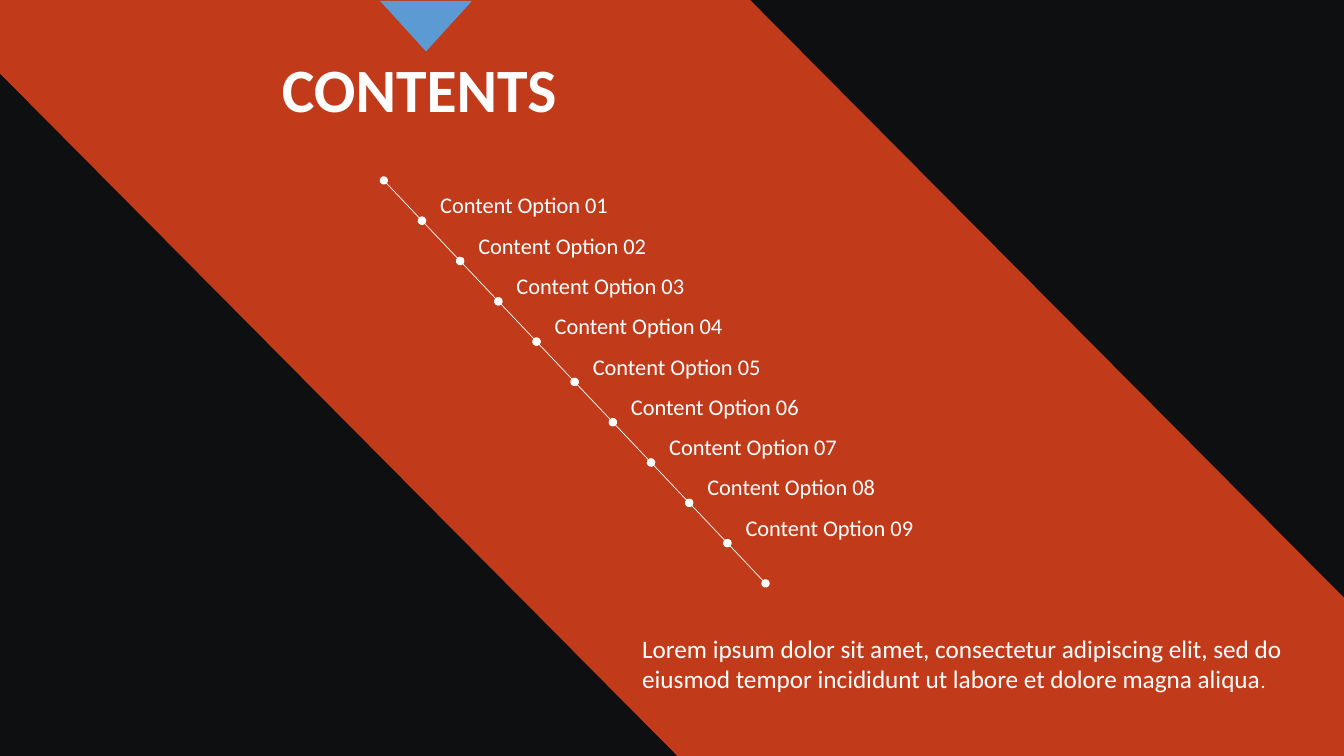
from lxml import etree
from pptx import Presentation
from pptx.dml.color import RGBColor
from pptx.enum.shapes import MSO_CONNECTOR, MSO_SHAPE
from pptx.enum.text import MSO_AUTO_SIZE, PP_ALIGN
from pptx.oxml.ns import qn
from pptx.util import Inches, Pt

LEFT, CENTER = PP_ALIGN.LEFT, PP_ALIGN.CENTER
TRIANGLE, STRAIGHT = MSO_SHAPE.ISOSCELES_TRIANGLE, MSO_CONNECTOR.STRAIGHT
GROW = MSO_AUTO_SIZE.SHAPE_TO_FIT_TEXT
COLORS = {"night": "0E0F11", "band": "FE4A1E", "marker": "5C9AD3", "text": "FFFFFF"}
FONT = "Calibri"


class SlideBuilder:
    """Draws on one slide; all lengths are percent of its width and height."""

    def __init__(self, deck):
        self.column = deck.slide_width / 100
        self.row = deck.slide_height / 100
        self.page = deck.slides.add_slide(deck.slide_layouts[6])
        self.shapes = self.page.shapes
        self.paint(self.page.background.fill, "night")

    def place(self, *lengths):
        """Turn alternating column and row lengths into EMU."""
        units = (self.column, self.row)
        return [round(length * units[i % 2]) for i, length in enumerate(lengths)]

    def paint(self, fill, color, opacity=100):
        fill.solid()
        fill.fore_color.rgb = RGBColor.from_string(COLORS[color])
        if opacity < 100:
            for element in fill._xPr.iter(qn("a:srgbClr")):
                etree.SubElement(element, qn("a:alpha"), val=str(opacity * 1000))

    def finish(self, shape, color, opacity=100):
        shape.shadow.inherit = False
        shape.line.fill.background()
        self.paint(shape.fill, color, opacity)

    def polygon(self, corners, color, opacity):
        points = [self.place(*corner) for corner in corners]
        outline = self.shapes.build_freeform(*points[0])
        outline.add_line_segments(points[1:], close=True)
        self.finish(outline.convert_to_shape(), color, opacity)

    def triangle(self, area, color, rotation):
        shape = self.shapes.add_shape(TRIANGLE, *self.place(*area))
        shape.rotation = rotation
        self.finish(shape, color)

    def dotted_line(self, start, end, color):
        """Add a thin line with a round dot at each end."""
        line = self.shapes.add_connector(STRAIGHT, *self.place(*start, *end))
        line.line.width = Pt(0.5)
        self.paint(line.line.fill, color)
        outline = line.line._get_or_add_ln()
        for tag in ("a:headEnd", "a:tailEnd"):
            etree.SubElement(outline, qn(tag), type="oval")
        etree.SubElement(line._element.spPr, qn("a:effectLst"))

    def text(self, area, spans, alignment=LEFT, bold=False):
        """Add a one-paragraph box; spans are (wording, point size) pairs."""
        box = self.shapes.add_textbox(*self.place(*area))
        frame = box.text_frame
        for name, value in {"word_wrap": True, "auto_size": GROW}.items():
            setattr(frame, name, value)
        para = frame.paragraphs[0]
        para.alignment = alignment
        for wording, size in spans:
            span = para.add_run()
            span.text = wording
            span.font.color.rgb = RGBColor.from_string(COLORS["text"])
            for name, value in {"name": FONT, "size": Pt(size), "bold": bold}.items():
                setattr(span.font, name, value)


def main():
    deck = Presentation()
    deck.slide_width, deck.slide_height = Inches(13.33), Inches(7.5)
    slide = SlideBuilder(deck)

    band = [(55.81, 0), (100, 79.07), (100, 100), (50.41, 100), (0, 9.73), (0, 0)]
    slide.polygon(band, "band", opacity=75)
    slide.text((16.2, 6.13, 30, 11.2), [("CONTENTS", 44)], CENTER, bold=True)

    step_x, step_y = 2.84, 5.33
    stops = [(28.56 + i * step_x, 23.87 + i * step_y) for i in range(11)]
    for start, end in zip(stops, stops[1:]):
        slide.dotted_line(start, end, "text")
    for number, (x, y) in enumerate(stops[:9], 1):
        slide.text((x + 3.45, y + 0.8, 15, 4.93), [(f"Content Option {number:02}", 16)])

    slide.triangle((28.28, 0.13, 6.83, 6.67), "marker", rotation=180)
    summary = (
        "Lorem ipsum dolor sit amet, consectetur adipiscing elit, sed do "
        "eiusmod tempor incididunt ut labore et dolore magna aliqua"
    )
    slide.text((47.04, 83.07, 52.96, 9.47), [(summary, 18), (".", 14)])
    deck.save("out.pptx")


if __name__ == "__main__":
    main()
